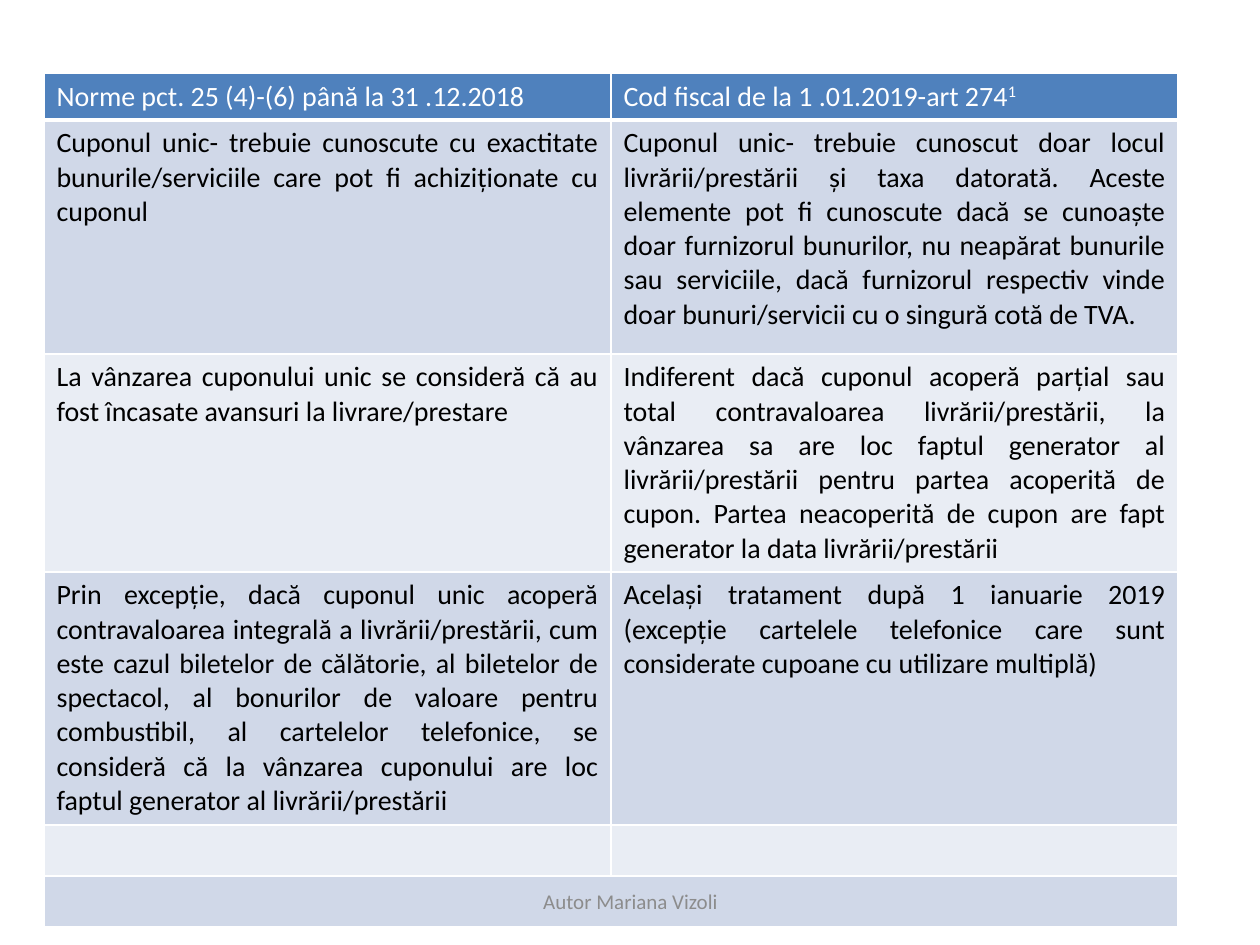
from lxml.etree import SubElement
from pptx import Presentation
from pptx.dml.color import RGBColor as RGB
from pptx.enum.text import MSO_ANCHOR as ANCHOR, PP_ALIGN as ALIGN
from pptx.oxml.ns import qn
from pptx.util import Emu, Pt

COLORS = {"head": "4F81BD", "dark": "D0D8E8", "light": "E9EDF4",
          "white": "FFFFFF", "black": "000000", "gray": "8C8C8C"}
ROW_HEIGHTS = [47, 234, 218, 253, 51, 51]
COL_WIDTH = 567
ROWS = [
    ("Norme pct. 25 (4)-(6) până la 31 .12.2018",
     "Cod fiscal de la 1 .01.2019-art 274"),
    ("Cuponul unic- trebuie cunoscute cu exactitate bunurile/serviciile care pot fi achiziționate cu cuponul",
     "Cuponul unic- trebuie cunoscut doar locul livrării/prestării și taxa datorată. Aceste elemente pot fi "
     "cunoscute dacă se cunoaște doar furnizorul bunurilor, nu neapărat bunurile sau serviciile, dacă "
     "furnizorul respectiv vinde doar bunuri/servicii cu o singură cotă de TVA."),
    ("La vânzarea cuponului unic se consideră că au fost încasate avansuri la livrare/prestare",
     "Indiferent dacă cuponul acoperă parțial sau total contravaloarea livrării/prestării, la vânzarea sa are "
     "loc faptul generator al livrării/prestării pentru partea acoperită de cupon. Partea neacoperită de cupon "
     "are fapt generator la data livrării/prestării"),
    ("Prin excepție, dacă cuponul unic acoperă contravaloarea integrală a livrării/prestării, cum este cazul "
     "biletelor de călătorie, al biletelor de spectacol, al bonurilor de valoare pentru combustibil, al "
     "cartelelor telefonice, se consideră că la vânzarea cuponului are loc faptul generator al "
     "livrării/prestării",
     "Același tratament după 1 ianuarie 2019 (excepție cartelele telefonice care sunt considerate cupoane cu "
     "utilizare multiplă)"),
    ("", ""),
    ("", ""),
]


def px(n):
    return Emu(round(n * 914400 / 126))


def add_run(p, text, size, color):
    r = p.add_run()
    r.text = text
    for name, value in {"name": "Calibri", "size": Pt(size), "bold": False}.items():
        setattr(r.font, name, value)
    r.font.color.rgb = RGB.from_string(COLORS[color])
    return r


prs = Presentation()
prs.slide_width, prs.slide_height = px(1260), px(945)
s = prs.slides.add_slide(prs.slide_layouts[6])

table = s.shapes.add_table(len(ROWS), 2, px(44), px(73),
                           px(2 * COL_WIDTH), px(sum(ROW_HEIGHTS))).table
for col in table.columns:
    col.width = px(COL_WIDTH)
for i, (texts, height) in enumerate(zip(ROWS, ROW_HEIGHTS)):
    table.rows[i].height = px(height)
    fill = "head" if i == 0 else "dark" if i % 2 else "light"
    for j, text in enumerate(texts):
        cell = table.cell(i, j)
        tcPr = cell._tc.get_or_add_tcPr()
        for side in "LRTB":
            width = 3 if i == 0 and side == "B" else 1
            ln = SubElement(tcPr, qn(f"a:ln{side}"), w=str(Pt(width)))
            SubElement(SubElement(ln, qn("a:solidFill")), qn("a:srgbClr"), val=COLORS["white"])
        cell.fill.solid()
        cell.fill.fore_color.rgb = RGB.from_string(COLORS[fill])
        if text:
            p = cell.text_frame.paragraphs[0]
            p.alignment = ALIGN.JUSTIFY
            add_run(p, text, 16, "black" if i else "white")

exponent = add_run(table.cell(0, 1).text_frame.paragraphs[0], "1", 16, "white")
exponent.font._element.set("baseline", "30000")
table.cell(5, 0).merge(table.cell(5, 1))

footer = s.shapes.add_textbox(px(431), px(876), px(399), px(50))
tf = footer.text_frame
for name, value in {"word_wrap": True, "vertical_anchor": ANCHOR.MIDDLE}.items():
    setattr(tf, name, value)
p = tf.paragraphs[0]
p.alignment = ALIGN.CENTER
add_run(p, "Autor Mariana Vizoli", 12, "gray")

prs.save("out.pptx")
